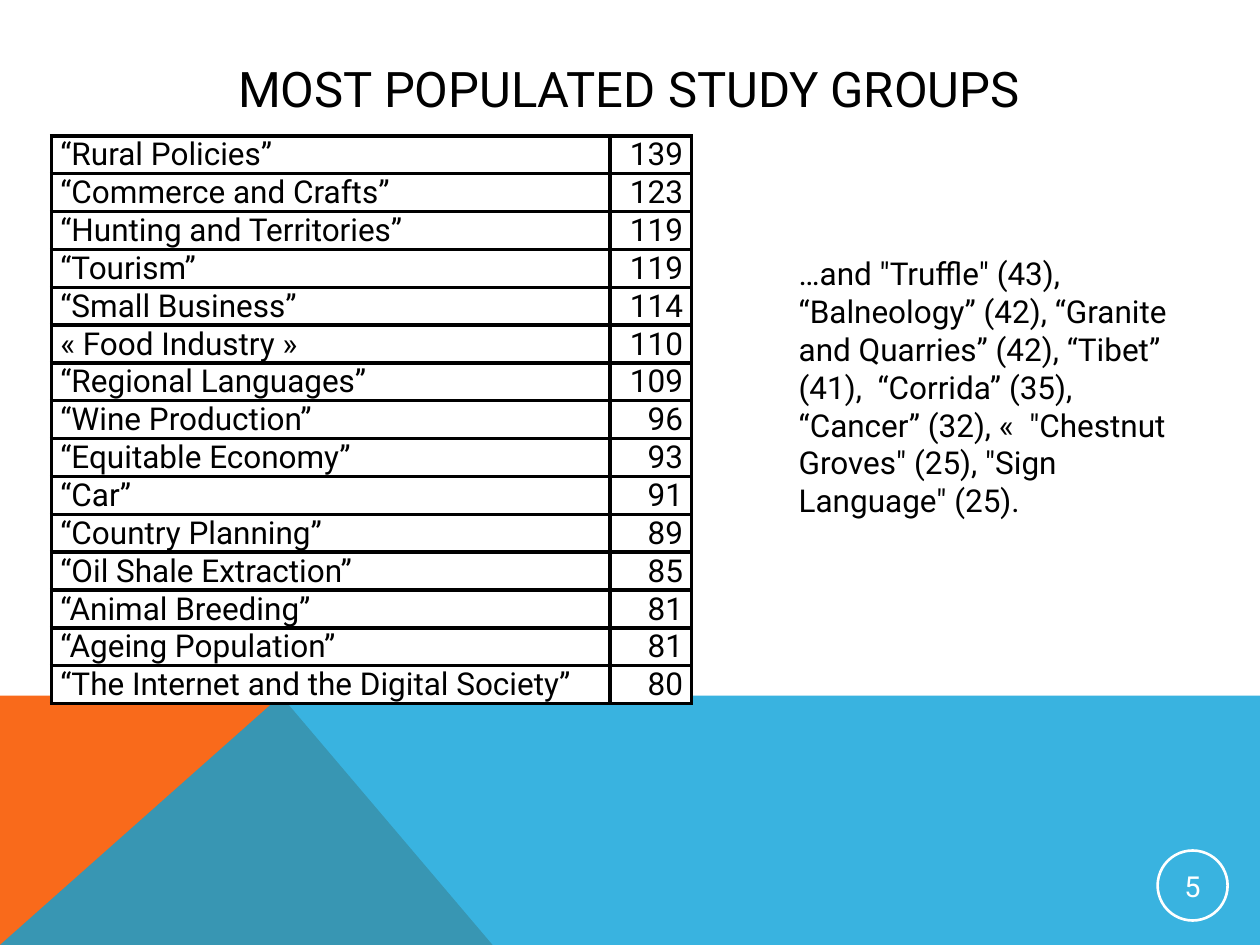
from lxml import etree
from pptx import Presentation
from pptx.dml.color import RGBColor
from pptx.enum.shapes import MSO_SHAPE
from pptx.enum.text import MSO_ANCHOR, PP_ALIGN
from pptx.oxml.ns import qn
from pptx.util import Pt

OVAL = MSO_SHAPE.OVAL
TOP, MIDDLE, BOTTOM = MSO_ANCHOR.TOP, MSO_ANCHOR.MIDDLE, MSO_ANCHOR.BOTTOM
LEFT, CENTER, RIGHT = PP_ALIGN.LEFT, PP_ALIGN.CENTER, PP_ALIGN.RIGHT
BLACK = RGBColor(0x00, 0x00, 0x00)
WHITE = RGBColor(0xFF, 0xFF, 0xFF)
ORANGE = RGBColor(0xF9, 0x6A, 0x1B)
BLUE = RGBColor(0x08, 0xA1, 0xD9)
FONT = "Roboto"

STUDY_GROUPS = [
    ("“Rural Policies”", 139),
    ("“Commerce and Crafts”", 123),
    ("“Hunting and Territories”", 119),
    ("“Tourism”", 119),
    ("“Small Business”", 114),
    ("« Food Industry »", 110),
    ("“Regional Languages”", 109),
    ("“Wine Production”", 96),
    ("“Equitable Economy”", 93),
    ("“Car”", 91),
    ("“Country Planning”", 89),
    ("“Oil Shale Extraction”", 85),
    ("“Animal Breeding”", 81),
    ("“Ageing Population”", 81),
    ("“The Internet and the Digital Society”", 80),
]
OTHER_GROUPS = (
    '…and "Truffle" (43), “Balneology” (42), “Granite and Quarries” (42), '
    '“Tibet” (41),  “Corrida” (35), “Cancer” (32), «  "Chestnut Groves" (25), '
    '"Sign Language" (25).'
)


def write_text(frame, text, size=18, color=BLACK, align=LEFT, anchor=TOP):
    frame.word_wrap = True
    frame.vertical_anchor = anchor
    para = frame.paragraphs[0]
    para.alignment = align
    span = para.add_run()
    span.text = text
    span.font.name = FONT
    span.font.size = Pt(size)
    span.font.color.rgb = color


def add_polygon(page, points, color):
    corners = [(Pt(x), Pt(y)) for x, y in points]
    builder = page.shapes.build_freeform(*corners[0], scale=1.0)
    builder.add_line_segments(corners[1:], close=True)
    polygon = builder.convert_to_shape()
    polygon.shadow.inherit = False
    polygon.fill.solid()
    polygon.fill.fore_color.rgb = color
    polygon.line.fill.background()
    return polygon


deck = Presentation()
deck.slide_width, deck.slide_height = Pt(720), Pt(540)
page = deck.slides.add_slide(deck.slide_layouts[6])

# Footer band: the translucent blue overlaps the orange
add_polygon(page, [(0, 540), (0, 397.5), (160.5, 397.5), (281.5, 540)], ORANGE)
band = add_polygon(page, [(0, 540), (160.5, 397.5), (720, 397.5), (720, 540)], BLUE)
band_color = band.fill._xPr.find(qn("a:solidFill"))[0]
etree.SubElement(band_color, qn("a:alpha"), val="80000")

title = page.shapes.add_textbox(Pt(10.8), Pt(28.8), Pt(697), Pt(43.2))
write_text(title.text_frame, "MOST POPULATED STUDY GROUPS", size=28,
           align=CENTER, anchor=MIDDLE)

number = page.shapes.add_shape(OVAL, Pt(661.5), Pt(486), Pt(40), Pt(40))
number.shadow.inherit = False
number.fill.background()
number.line.color.rgb = WHITE
number.line.width = Pt(1.5)
frame = number.text_frame
frame.margin_left = frame.margin_right = Pt(0.7)
frame.margin_top = frame.margin_bottom = Pt(0.7)
write_text(frame, "5", size=16.5, color=WHITE, align=CENTER, anchor=MIDDLE)

# Study groups with their member counts
ROW_HEIGHT = 21.1
COLUMN_WIDTHS = (319, 46.8)
table = page.shapes.add_table(
    len(STUDY_GROUPS), 2, Pt(29.5), Pt(77.6),
    Pt(sum(COLUMN_WIDTHS)), Pt(ROW_HEIGHT * len(STUDY_GROUPS))).table
table.first_row = table.horz_banding = False
for column, width in zip(table.columns, COLUMN_WIDTHS):
    column.width = Pt(width)
for row, group in zip(table.rows, STUDY_GROUPS):
    row.height = Pt(ROW_HEIGHT)
    for cell, value, align in zip(row.cells, group, (LEFT, RIGHT)):
        cell.margin_left = cell.margin_right = Pt(5)
        cell.margin_top = cell.margin_bottom = 0
        write_text(cell.text_frame, str(value), align=align)
        cell.vertical_anchor = BOTTOM
        properties = cell._tc.get_or_add_tcPr()
        for side in ("lnL", "lnR", "lnT", "lnB"):
            border = etree.SubElement(properties, qn("a:" + side), w=str(Pt(2.25)))
            fill = etree.SubElement(border, qn("a:solidFill"))
            etree.SubElement(fill, qn("a:srgbClr"), val=str(BLACK))
        cell.fill.solid()
        cell.fill.fore_color.rgb = WHITE

others = page.shapes.add_textbox(Pt(449.3), Pt(141.8), Pt(238.3), Pt(159.8))
write_text(others.text_frame, OTHER_GROUPS)

deck.save("out.pptx")
